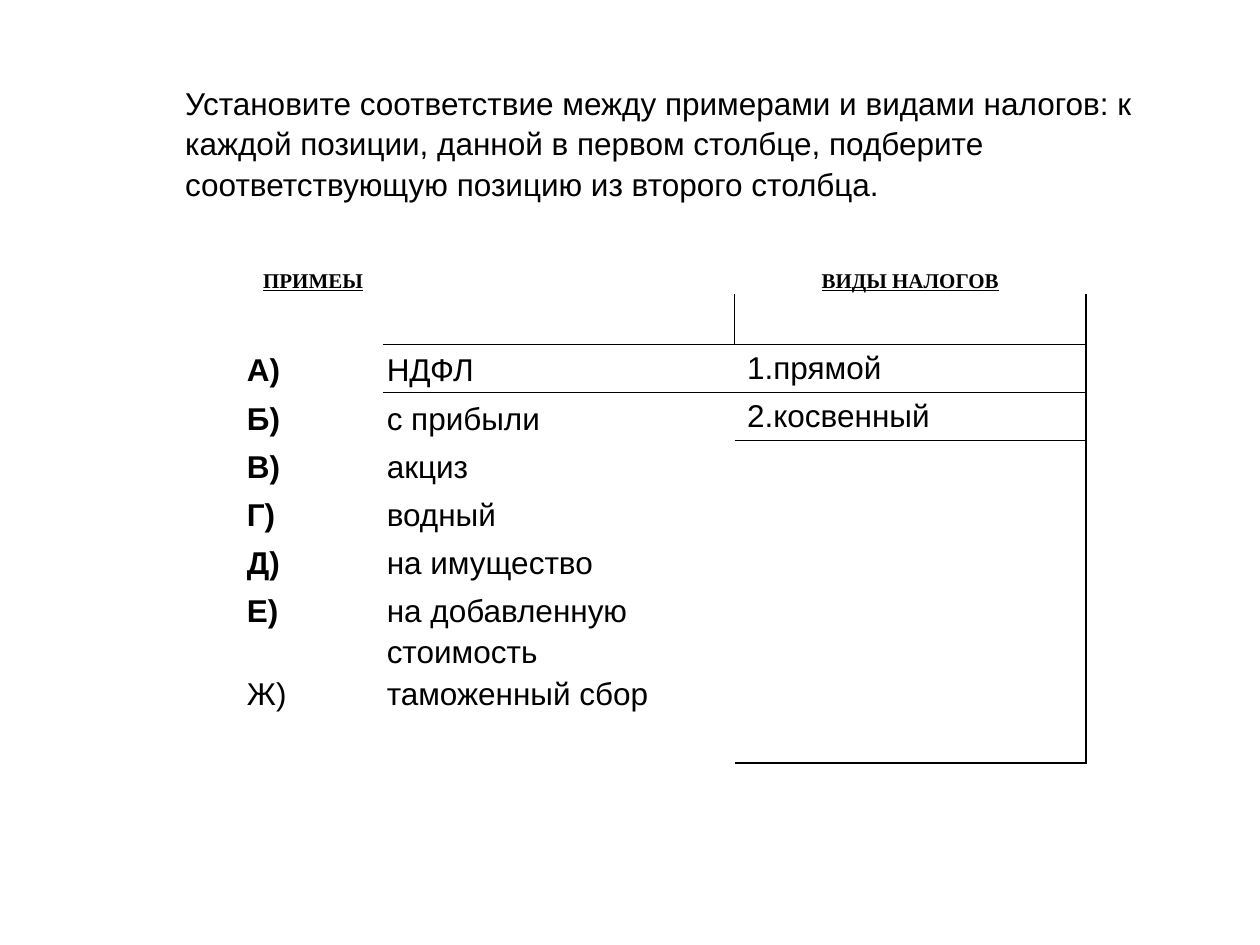
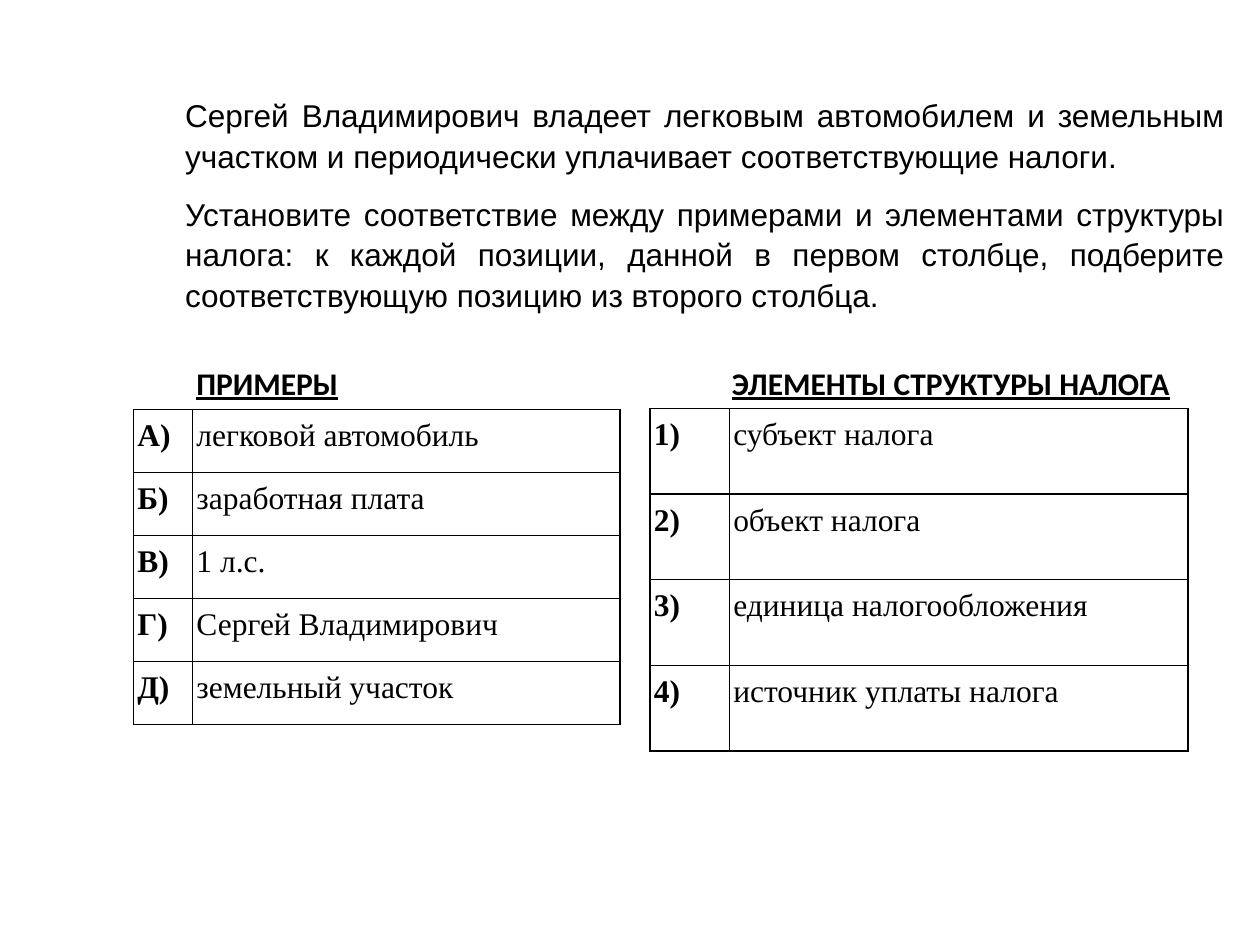
import pptx
import pptx.enum.text
import pptx.dml.color
import pptx.oxml.ns
import pptx.util
from lxml import etree

Inches, Pt = pptx.util.Inches, pptx.util.Pt
qn = pptx.oxml.ns.qn
ALIGN = pptx.enum.text.PP_ALIGN
ANCHOR = pptx.enum.text.MSO_ANCHOR

# Content
TASK_1 = ["Установите соответствие между примерами и видами налогов: к каждой "
          "позиции, данной в первом столбце, подберите соответствующую позицию "
          "из второго столбца."]
TASK_2 = ["Сергей Владимирович владеет легковым автомобилем и земельным участком "
          "и периодически уплачивает соответствующие налоги.",
          "Установите соответствие между примерами и элементами структуры налога: "
          "к каждой позиции, данной в первом столбце, подберите соответствующую "
          "позицию из второго столбца."]
TAX_HEADS = ["ПРИМЕЫ", "", "ВИДЫ НАЛОГОВ"]
TAX_EXAMPLES = [("А)", "НДФЛ"), ("Б)", "с прибыли"), ("В)", "акциз"),
                ("Г)", "водный"), ("Д)", "на имущество"),
                ("Е)", "на добавленную стоимость"), ("Ж)", "таможенный сбор")]
TAX_KINDS = ["1.прямой", "2.косвенный"]
EXAMPLES = [("А)", "легковой автомобиль"), ("Б)", "заработная плата"),
            ("В)", "1 л.с."), ("Г)", "Сергей Владимирович"),
            ("Д)", "земельный участок")]
ELEMENTS = [("1)", "субъект налога"), ("2)", "объект налога"),
            ("3)", "единица налогообложения"), ("4)", "источник уплаты налога")]

# Shared look
COLORS = {"text": "000000", "line": "000000"}
NO_GRID_STYLE = "{2D5ABB26-0587-4C30-8999-92F81FD0307C}"
TIGHT, SNUG, ROOMY = (0.01, 0.01), (0.03, 0.03), (0.1, 0.05)
TASK_LEFT = 1.46


def write(tf, text, size=18, font="Arial", bold=False, underline=False,
          align=ALIGN.LEFT, spacing=1.15, after=0):
    """Fill a text frame with one paragraph per string."""
    for i, line in enumerate([text] if isinstance(text, str) else text):
        p = tf.paragraphs[0] if i == 0 else tf.add_paragraph()
        p.alignment, p.line_spacing, p.space_after = align, spacing, Pt(after)
        if not line:
            etree.SubElement(p._p, qn("a:endParaRPr"), sz=str(size * 100))
            continue
        r = p.add_run()
        r.text = line
        r.font.size, r.font.name = Pt(size), font
        r.font.bold, r.font.underline = bold, underline
        r.font.color.rgb = pptx.dml.color.RGBColor.from_string(COLORS["text"])


def draw_borders(cell, sides, width=1):
    tc_pr = cell._tc.get_or_add_tcPr()
    for i, side in enumerate(s for s in "LRTB" if s in sides):
        ln = etree.Element(qn("a:ln" + side), w=str(Pt(width)))
        fill = etree.SubElement(ln, qn("a:solidFill"))
        etree.SubElement(fill, qn("a:srgbClr"), val=COLORS["line"])
        tc_pr.insert(i, ln)


def add_table(slide, left, top, cols, rows):
    """Add a plain table with no fills and no lines."""
    frame = slide.shapes.add_table(len(rows), len(cols), Inches(left), Inches(top),
                                   Inches(sum(cols)), Inches(sum(rows)))
    table = frame.table
    table.first_row = table.horz_banding = False
    frame._element.find(".//" + qn("a:tableStyleId")).text = NO_GRID_STYLE
    for column, width in zip(table.columns, cols):
        column.width = Inches(width)
    for row, height in zip(table.rows, rows):
        row.height = Inches(height)
    for cell in table.iter_cells():
        cell.fill.background()
    return table


def fill_cell(cell, text, inset=SNUG, anchor=ANCHOR.TOP, **fmt):
    cell.margin_left = cell.margin_right = Inches(inset[0])
    cell.margin_top = cell.margin_bottom = Inches(inset[1])
    cell.vertical_anchor = anchor
    write(cell.text_frame, text, **fmt)


def add_task(slide, text, top, width, height, align):
    cell = add_table(slide, TASK_LEFT, top, [width], [height]).cell(0, 0)
    fill_cell(cell, text, TIGHT, ANCHOR.MIDDLE, align=align, after=10)


def add_heading(slide, text, left, width):
    sp = slide.shapes.add_textbox(Inches(left), Inches(2.84), Inches(width), Inches(0.4))
    tf = sp.text_frame
    tf.word_wrap = False
    tf.auto_size = pptx.enum.text.MSO_AUTO_SIZE.SHAPE_TO_FIT_TEXT
    write(tf, text, font="Calibri", bold=True, underline=True, spacing=1.0)


def add_list_table(slide, items, left, top, cols, row_height):
    """Add a fully ruled table of lettered or numbered items."""
    table = add_table(slide, left, top, cols, [row_height] * len(items))
    for r, (mark, name) in enumerate(items):
        fill_cell(table.cell(r, 0), mark, font="Times New Roman", bold=True)
        fill_cell(table.cell(r, 1), name, font="Times New Roman", after=10)
    for cell in table.iter_cells():
        draw_borders(cell, "LRTB")


def build_tax_kinds(slide):
    add_task(slide, TASK_1, 0.6, 7.95, 1.06, ALIGN.LEFT)
    rows = [0.23, 0.4] + [0.38] * 5 + [0.7, 0.34, 0.37]
    table = add_table(slide, 1.93, 2.1, [1.11, 2.79, 2.79], rows)
    last = len(rows) - 1
    table.cell(4, 2).merge(table.cell(last, 2))

    # Heading row and the empty rows
    for c, head in enumerate(TAX_HEADS):
        fill_cell(table.cell(0, c), head, TIGHT, size=12, font="Times New Roman",
                  bold=True, underline=True, align=ALIGN.CENTER)
        fill_cell(table.cell(1, c), "", size=12)
    for c in (0, 1):
        fill_cell(table.cell(last, c), "", size=12)

    # Examples on the left, kinds of tax on the right
    for r, (mark, name) in enumerate(TAX_EXAMPLES, 2):
        is_last = r == last - 1
        spacing = 1.0 if is_last else 1.15
        fill_cell(table.cell(r, 0), mark, bold=not is_last, spacing=spacing)
        fill_cell(table.cell(r, 1), name, spacing=spacing, after=0 if is_last else 10)
    for r, kind in enumerate(TAX_KINDS, 2):
        fill_cell(table.cell(r, 2), kind, ROOMY, spacing=1.0)

    # Lines around the right column only
    sides = {(1, 1): "B", (2, 1): "T", (1, 2): "LRB"}
    sides.update({(r, 2): "RTB" if r <= 4 else "R" for r in range(2, last)})
    sides[last, 2] = "RB"
    for (r, c), edge in sides.items():
        draw_borders(table.cell(r, c), edge)


def build_tax_elements(slide):
    add_task(slide, TASK_2, 0.68, 8.27, 1.88, ALIGN.JUSTIFY)
    add_heading(slide, "ПРИМЕРЫ", 1.46, 1.34)
    add_heading(slide, "ЭЛЕМЕНТЫ СТРУКТУРЫ НАЛОГА", 5.71, 3.71)
    add_list_table(slide, EXAMPLES, 1.06, 3.25, [0.47, 3.39], 0.5)
    add_list_table(slide, ELEMENTS, 5.16, 3.24, [0.63, 3.64], 0.68)


def main():
    prs = pptx.Presentation()
    prs.slide_width, prs.slide_height = Inches(10), Inches(7.5)
    blank = prs.slide_layouts[6]
    for build in (build_tax_kinds, build_tax_elements):
        build(prs.slides.add_slide(blank))
    prs.save("out.pptx")


if __name__ == "__main__":
    main()
